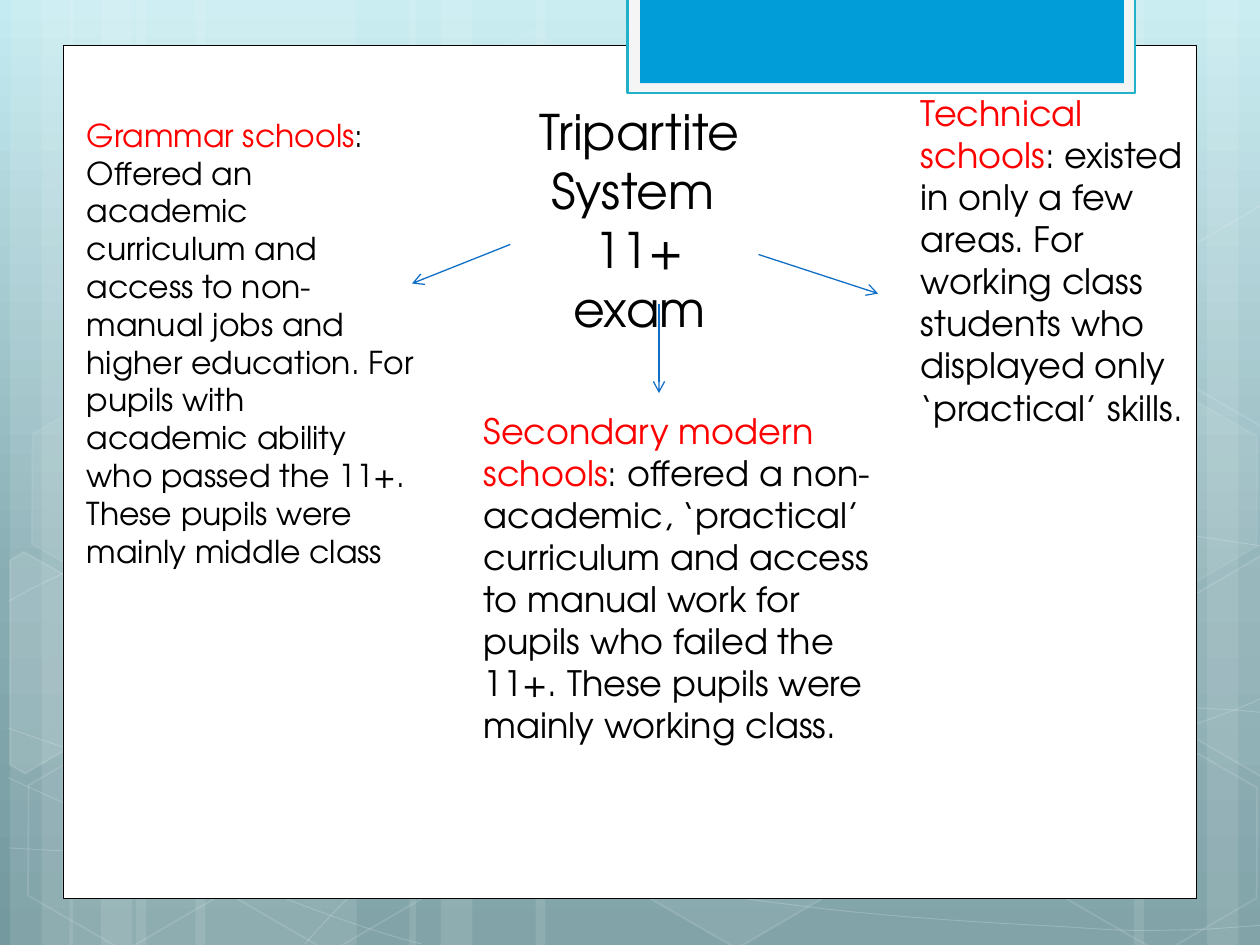
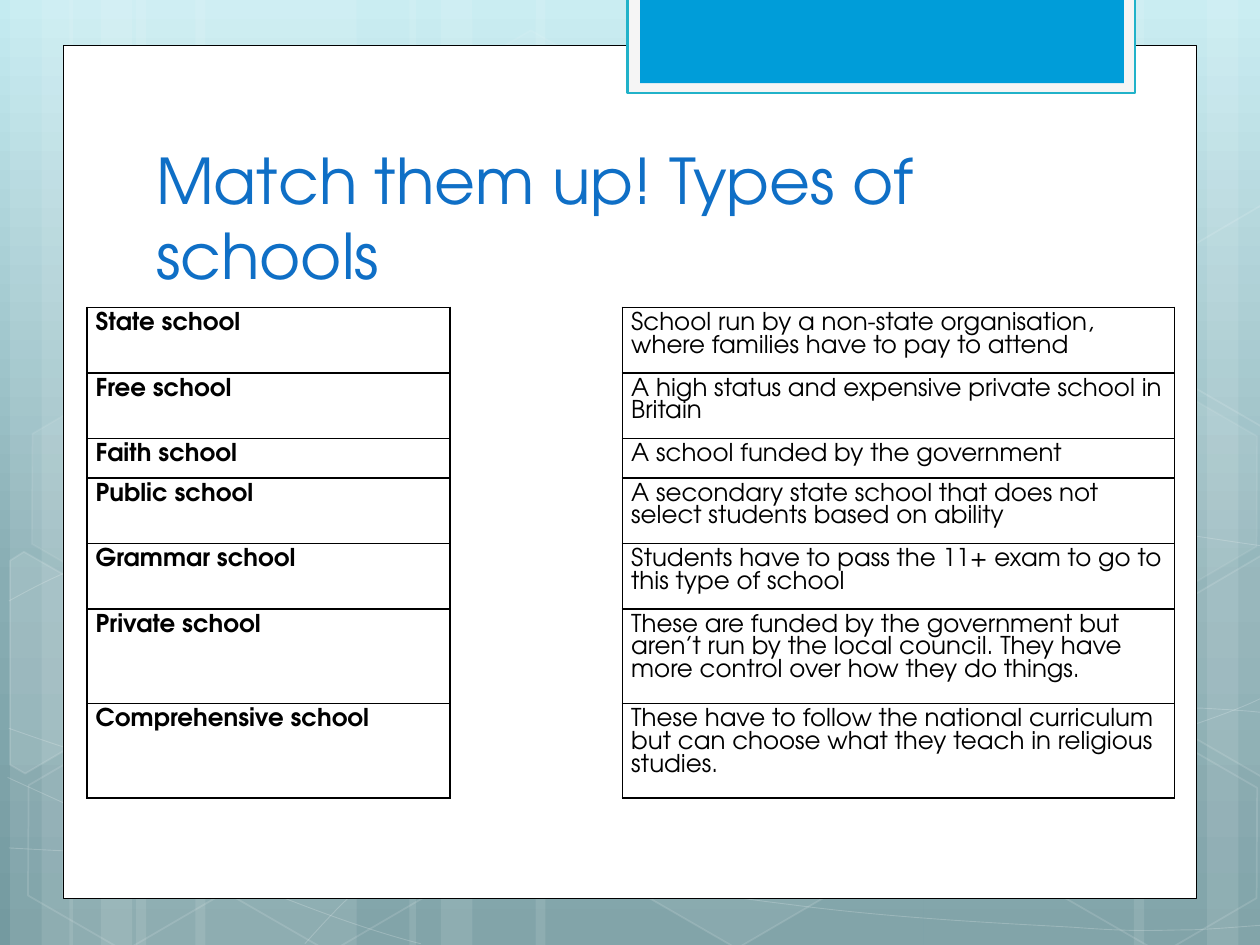
from copy import deepcopy
from dataclasses import dataclass
from typing import NamedTuple, Optional

from lxml.etree import SubElement
from pptx import Presentation
from pptx.dml.color import RGBColor
from pptx.enum.shapes import MSO_CONNECTOR, MSO_SHAPE
from pptx.enum.text import MSO_ANCHOR, PP_ALIGN
from pptx.oxml.ns import qn
from pptx.util import Inches, Pt

FONT = "TeX Gyre Adventor"
WHITE = RGBColor(0xFF, 0xFF, 0xFF)
BLACK = RGBColor(0x00, 0x00, 0x00)
RED = RGBColor(0xFF, 0x00, 0x00)
BLUE = RGBColor(0x0F, 0x6F, 0xC6)
TAB_BLUE = RGBColor(0x00, 0x9D, 0xD9)
TAB_FRAME = RGBColor(0xF5, 0xF5, 0xF5)
TAB_LINE = RGBColor(0x21, 0xB2, 0xC9)
BACKGROUND_STOPS = (
    (0, RGBColor(0xC4, 0xEB, 0xF1)),
    (0.62, RGBColor(0x88, 0xAD, 0xB3)),
    (1, RGBColor(0x74, 0x9A, 0xA0)),
)


class Box(NamedTuple):
    left: float
    top: float
    width: float
    height: float

    def lengths(self) -> list:
        return [Inches(value) for value in self]


@dataclass
class Paint:
    fill: Optional[RGBColor] = None
    fill_opacity: int = 100
    line: Optional[RGBColor] = None
    line_width: float = 1
    line_opacity: int = 100


@dataclass
class TextBlock:
    box: Box
    paragraphs: list
    size: int
    align: PP_ALIGN = PP_ALIGN.LEFT
    anchor: MSO_ANCHOR = MSO_ANCHOR.TOP


class Arrow(NamedTuple):
    start: tuple
    end: tuple


STRIPES = (
    (1.08, 1.75), (0.08, 0.5), (0.33, 0.83), (1.55, 1.75), (0.55, 0.5), (0.8, 0.83),
    (7.33, 1.75), (9.58, 0.5), (9, 0.83), (4.25, 3.08), (3.25, 0.5), (3.5, 0.83),
)
STRIPE_PAINT = Paint(WHITE, 10)
CURVE_PAINT = Paint(line=WHITE, line_width=0.5, line_opacity=20)
CURVES = (
    ((0.07, 6.73), (0.61, 6.76), (1.15, 6.79), (1.9, 6.78), (2.65, 6.77), (3.58, 6.75), (4.58, 6.65),
     (5.58, 6.55), (7, 6.36), (7.92, 6.17), (8.83, 5.98), (9.77, 5.68), (10.07, 5.51)),
    ((0.07, 4.77), (0.36, 4.61), (0.65, 4.46), (1.21, 4.31), (1.78, 4.16), (2.59, 3.94), (3.47, 3.87),
     (4.36, 3.8), (5.44, 3.79), (6.54, 3.87), (7.64, 3.95), (9.47, 4.26), (10.07, 4.34)),
    ((0.06, 6.17), (1.27, 6.72), (2.47, 7.27), (3.34, 7.49)),
    ((0.07, 5.78), (0.38, 5.89), (0.7, 6), (1.28, 6.16), (1.86, 6.31), (2.73, 6.56), (3.57, 6.73),
     (4.4, 6.9), (5.45, 7.08), (6.28, 7.18), (7.11, 7.29), (8, 7.33), (8.53, 7.36),
     (9.05, 7.4), (9.19, 7.38), (9.45, 7.38), (9.71, 7.37), (9.89, 7.35), (10.07, 7.34)),
    ((2.42, 7.49), (2.6, 7.29), (2.78, 7.09), (3.02, 6.91), (3.26, 6.73), (3.6, 6.53), (3.88, 6.39),
     (4.16, 6.25), (4.33, 6.19), (4.7, 6.09), (5.06, 5.99), (5.73, 5.85), (6.08, 5.78),
     (6.44, 5.71), (6.49, 5.71), (6.8, 5.69), (7.11, 5.66), (7.6, 5.63), (7.94, 5.62),
     (8.29, 5.61), (8.86, 5.62), (8.86, 5.62), (8.86, 5.62), (9.53, 5.62), (9.53, 5.62),
     (9.71, 5.63), (9.88, 5.64), (9.97, 5.65), (10.06, 5.66), (10.03, 5.65), (10.06, 5.66)),
)
FAINT_HEXAGON = Paint(WHITE, 7, WHITE, 1, 8)
OPEN_HEXAGON = Paint(line=WHITE, line_opacity=12)
HEXAGONS = (
    (3.34, 0.36, Paint(WHITE, 4, WHITE, 1, 8)),
    (4.97, 5.89, Paint(WHITE, 6, WHITE, 1, 12)),
    (0.11, 5.91, OPEN_HEXAGON),
    (0.14, 3.12, FAINT_HEXAGON),
    (1.74, 5.92, OPEN_HEXAGON),
    (8.34, 5.93, OPEN_HEXAGON),
    (8.34, 3.14, FAINT_HEXAGON),
)
CUT_HEXAGONS = (
    (((0.08, 4.45), (0.19, 4.38), (0.96, 4.82), (0.95, 5.7), (0.2, 6.14), (0.08, 6.07)),
     Paint(WHITE, 10, WHITE, 1, 12)),
    (((9.26, 4.85), (10.01, 4.41), (10.09, 4.46), (10.09, 6.13), (10.02, 6.17), (9.26, 5.73)),
     Paint(WHITE, 4, WHITE, 1, 12)),
    (((9.26, 2.07), (10.01, 1.63), (10.1, 1.68), (10.09, 3.35), (10.02, 3.39), (9.26, 2.95)),
     OPEN_HEXAGON),
)
PANELS = (
    (Box(0.5, 0.36, 9, 6.77), Paint(WHITE, line=BLACK, line_width=0.5)),
    (Box(4.98, -0.02, 4.03, 0.76), Paint(TAB_FRAME, line=TAB_LINE, line_width=1.25)),
    (Box(5.08, -0.02, 3.84, 0.68), Paint(TAB_BLUE)),
)

SYSTEM_TEXTS = (
    TextBlock(Box(4.05, 0.76, 2.05, 1.51),
              [[("Tripartite System ", BLACK)], [("11+ exam", BLACK)]], 28, PP_ALIGN.CENTER),
    TextBlock(Box(0.59, 0.87, 2.8, 3.74), [
        [("Grammar schools", RED), (":", BLACK)],
        [("Offered an academic curriculum and access to non-manual jobs and higher education. "
          "For pupils with academic ability who passed the 11+. "
          "These pupils were mainly middle class", BLACK)],
    ], 18),
    TextBlock(Box(3.74, 3.2, 3.31, 2.79), [
        [("Secondary modern schools", RED),
         (": offered a non-academic, ‘practical’ curriculum and access to manual work for pupils "
          "who failed the 11+. These pupils were mainly working class.", BLACK)],
    ], 20),
    TextBlock(Box(7.21, 0.68, 2.52, 2.79), [
        [("Technical schools", RED),
         (": existed in only a few areas. For working class students who displayed only "
          "‘practical’ skills.", BLACK)],
    ], 20),
)
SYSTEM_ARROWS = (
    Arrow((4.05, 1.94), (3.27, 2.25)),
    Arrow((5.23, 2.41), (5.23, 3.12)),
    Arrow((6.02, 2.02), (6.97, 2.33)),
)
MATCH_TITLE = TextBlock(Box(1.14, 1.12, 7.68, 1.25), [[("Match them up! Types of schools", BLUE)]],
                        36, anchor=MSO_ANCHOR.BOTTOM)
MATCH_BOX = Box(0.69, 2.44, 8.63, 3.89)
MATCH_COLUMNS = (2.88, 1.37, 4.38)
MATCH_ROWS = (
    (0.52, "State school",
     "School run by a non-state organisation, where families have to pay to attend"),
    (0.52, "Free school", "A high status and expensive private school in Britain"),
    (0.31, "Faith school", "A school funded by the government"),
    (0.52, "Public school", "A secondary state school that does not select students based on ability"),
    (0.52, "Grammar school", "Students have to pass the 11+ exam to go to this type of school"),
    (0.75, "Private school",
     "These are funded by the government but aren’t run by the local council. "
     "They have more control over how they do things."),
    (0.75, "Comprehensive school",
     "These have to follow the national curriculum but can choose what they teach in religious studies."),
)


def set_opacity(fill, color: RGBColor, opacity: int, element) -> None:
    fill.solid()
    fill.fore_color.rgb = color
    if opacity < 100:
        SubElement(element.find(f".//{qn('a:srgbClr')}"), qn("a:alpha"), val=str(opacity * 1000))


def apply_paint(shape, paint: Paint) -> None:
    shape.shadow.inherit = False
    properties = shape.element.spPr
    if paint.fill is None:
        shape.fill.background()
    else:
        set_opacity(shape.fill, paint.fill, paint.fill_opacity, properties)
    if paint.line is None:
        shape.line.fill.background()
    else:
        shape.line.width = Pt(paint.line_width)
        set_opacity(shape.line.fill, paint.line, paint.line_opacity, properties.find(qn("a:ln")))


def add_panel(slide, box: Box, paint: Paint, kind=MSO_SHAPE.RECTANGLE):
    shape = slide.shapes.add_shape(kind, *box.lengths())
    apply_paint(shape, paint)
    return shape


def add_outline(slide, points, paint: Paint, close: bool):
    corners = [(Inches(x), Inches(y)) for x, y in points]
    builder = slide.shapes.build_freeform(*corners[0])
    builder.add_line_segments(corners[1:], close=close)
    shape = builder.convert_to_shape()
    apply_paint(shape, paint)
    return shape


def add_curve(slide, knots) -> None:
    shape = add_outline(slide, knots, CURVE_PAINT, close=False)
    outline = shape.element.spPr.find(f".//{qn('a:path')}")
    segments = outline.findall(qn("a:lnTo"))
    for index in range(0, len(segments), 3):
        bezier = SubElement(outline, qn("a:cubicBezTo"))
        for segment in segments[index:index + 3]:
            bezier.append(segment[0])
            outline.remove(segment)


def set_background(slide) -> None:
    fill = slide.background.fill
    fill.gradient()
    fill.gradient_angle = 270
    stop_list = slide.element.find(f".//{qn('a:gsLst')}")
    stop_list.append(deepcopy(stop_list[0]))
    for stop, (position, color) in zip(fill.gradient_stops, BACKGROUND_STOPS):
        stop.position = position
        stop.color.rgb = color


def add_themed_slide(presentation):
    slide = presentation.slides.add_slide(presentation.slide_layouts[6])
    set_background(slide)
    for left, width in STRIPES:
        add_panel(slide, Box(left, 0, width, 7.5), STRIPE_PAINT)
    for knots in CURVES:
        add_curve(slide, knots)
    for left, top, paint in HEXAGONS:
        hexagon = add_panel(slide, Box(left, top, 1.75, 1.52), paint, MSO_SHAPE.HEXAGON)
        hexagon.adjustments[0] = 0.285
        hexagon.rotation = 30
    for points, paint in CUT_HEXAGONS:
        add_outline(slide, points, paint, close=True)
    for box, paint in PANELS:
        add_panel(slide, box, paint)
    return slide


def set_font(font, size: int, color: RGBColor, bold: bool = False) -> None:
    font.name = FONT
    font.size = Pt(size)
    font.bold = bold
    font.color.rgb = color


def add_text(slide, block: TextBlock) -> None:
    frame = slide.shapes.add_textbox(*block.box.lengths()).text_frame
    frame.word_wrap = True
    frame.vertical_anchor = block.anchor
    for index, runs in enumerate(block.paragraphs):
        paragraph = frame.add_paragraph() if index else frame.paragraphs[0]
        paragraph.alignment = block.align
        set_font(paragraph.font, block.size, runs[-1][1])
        for text, color in runs:
            run = paragraph.add_run()
            run.text = text
            if len(runs) > 1:
                run.font.color.rgb = color


def add_arrow(slide, arrow: Arrow) -> None:
    ends = [Inches(value) for value in (*arrow.start, *arrow.end)]
    connector = slide.shapes.add_connector(MSO_CONNECTOR.STRAIGHT, *ends)
    connector.line.color.rgb = BLUE
    connector.line.width = Pt(0.75)
    properties = connector.element.spPr
    SubElement(properties.find(qn("a:ln")), qn("a:tailEnd"), type="arrow")
    SubElement(properties, qn("a:effectLst"))


def set_borders(cell, drawn_sides: str) -> None:
    properties = cell._tc.get_or_add_tcPr()
    for position, side in enumerate("LRTB"):
        line = properties.makeelement(qn(f"a:ln{side}"), w=str(Pt(1)))
        properties.insert(position, line)
        if side in drawn_sides:
            SubElement(SubElement(line, qn("a:solidFill")), qn("a:srgbClr"), val=str(BLACK))
        else:
            SubElement(line, qn("a:noFill"))


def add_match_table(slide) -> None:
    table = slide.shapes.add_table(len(MATCH_ROWS), len(MATCH_COLUMNS), *MATCH_BOX.lengths()).table
    table.first_row = table.horz_banding = False
    for column, width in zip(table.columns, MATCH_COLUMNS):
        column.width = Inches(width)
    for row, (height, school, description) in zip(table.rows, MATCH_ROWS):
        row.height = Inches(height)
        for cell, text in zip(row.cells, (school, "", description)):
            cell.fill.background()
            set_borders(cell, "LRTB" if text else "LR")
            cell.margin_left = cell.margin_right = Inches(0.07)
            cell.margin_top = cell.margin_bottom = Inches(0.04)
            paragraph = cell.text_frame.paragraphs[0]
            paragraph.line_spacing = Pt(13)
            set_font(paragraph.font, 14, BLACK, text == school)
            if text:
                paragraph.add_run().text = text


def main() -> None:
    presentation = Presentation()
    presentation.slide_width, presentation.slide_height = Inches(10), Inches(7.5)
    system_slide = add_themed_slide(presentation)
    for block in SYSTEM_TEXTS:
        add_text(system_slide, block)
    for arrow in SYSTEM_ARROWS:
        add_arrow(system_slide, arrow)
    match_slide = add_themed_slide(presentation)
    add_text(match_slide, MATCH_TITLE)
    add_match_table(match_slide)
    presentation.save("out.pptx")


if __name__ == "__main__":
    main()
